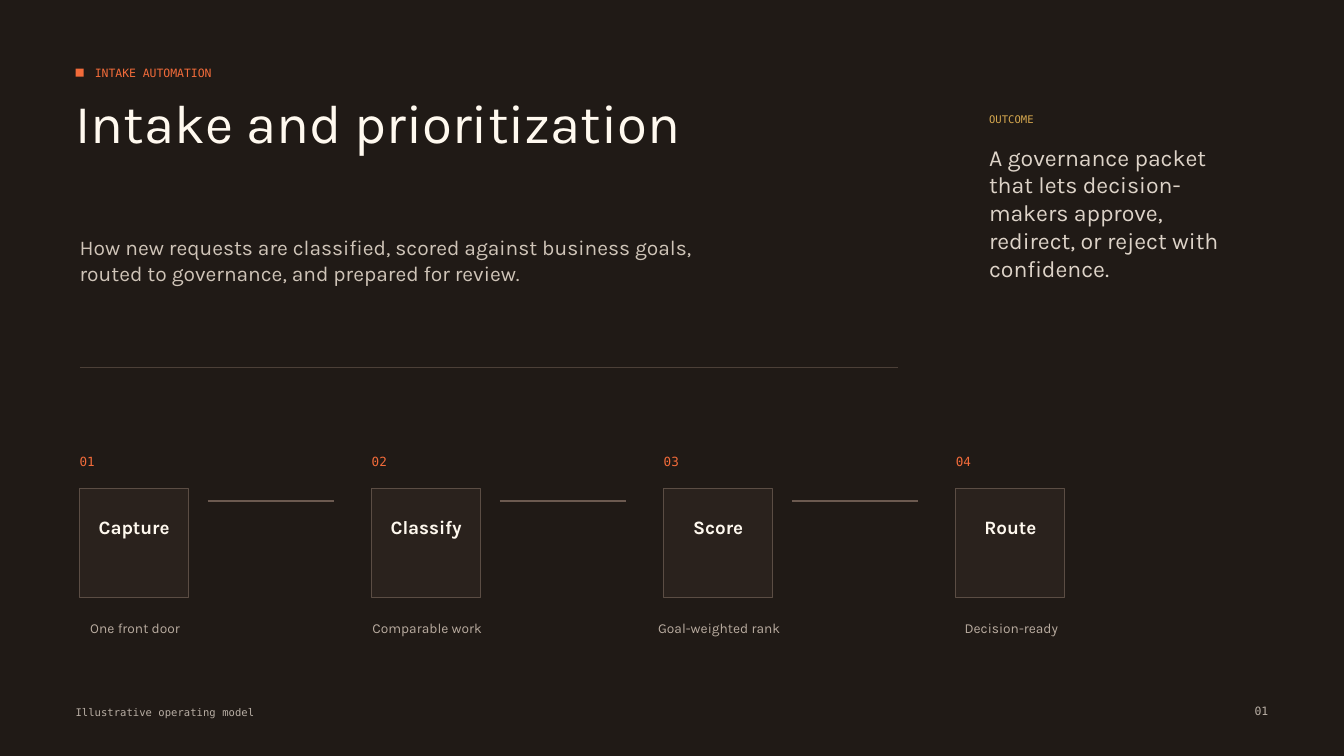
from pptx import Presentation
from pptx.dml.color import RGBColor
from pptx.enum.shapes import MSO_CONNECTOR, MSO_SHAPE
from pptx.enum.text import MSO_ANCHOR, PP_ALIGN
from pptx.oxml.ns import qn
from pptx.util import Inches, Pt
from lxml import etree

# Content
EYEBROW = "INTAKE AUTOMATION"
TITLE = "Intake and prioritization"
SUMMARY = ("How new requests are classified, scored against business goals, "
           "routed to governance, and prepared for review.")
OUTCOME_LABEL = "OUTCOME"
OUTCOME = ("A governance packet that lets decision-makers approve, redirect, "
           "or reject with confidence.")
STEPS = [
    ("Capture", "One front door"),
    ("Classify", "Comparable work"),
    ("Score", "Goal-weighted rank"),
    ("Route", "Decision-ready"),
]
FOOTER, PAGE = "Illustrative operating model", "01"

# Style
SANS, MONO = "Karla", "DejaVu Sans Mono"
DARK, ACCENT, CREAM, GOLD = "201A16", "F26B3A", "FFF9EF", "D6A84F"
CARD, CARD_EDGE, RULE, LINK = "2A221D", "5B4D44", "4C4038", "6C5A50"
SUMMARY_INK, CAPTION_INK, OUTCOME_INK, FOOTER_INK = "CFC4B8", "B9ACA0", "DDD3C8", "B8AEA4"

# Grid, in inches
WIDTH, HEIGHT = 13.33, 7.5
MARGIN, LEFT, SIDE = 0.75, 0.79, 9.81
LAST_STEP = 9.48
PITCH = (LAST_STEP - LEFT) / (len(STEPS) - 1)
CARD_TOP, CARD_SIZE = 4.85, 1.08
NAME_W, CAPTION_W = 0.79, 1.48
LINK_GAP, LINK_W = 0.19, 1.25

prs = Presentation()
prs.slide_width, prs.slide_height = Inches(WIDTH), Inches(HEIGHT)
s = prs.slides.add_slide(prs.slide_layouts[6])


def paint(fill, color):
    fill.solid()
    fill.fore_color.rgb = RGBColor.from_string(color)


def box(x, y, w, h, color, edge=None):
    sp = s.shapes.add_shape(MSO_SHAPE.RECTANGLE, Inches(x), Inches(y), Inches(w), Inches(h))
    sp.shadow.inherit = False
    paint(sp.fill, color)
    if edge:
        paint(sp.line.fill, edge)
        sp.line.width = Pt(0.75)
    else:
        sp.line.fill.background()


def rule(x, y, w, color, weight):
    line = s.shapes.add_connector(MSO_CONNECTOR.STRAIGHT, Inches(x), Inches(y),
                                  Inches(x + w), Inches(y))
    paint(line.line.fill, color)
    line.line.width = Pt(weight)
    etree.SubElement(line._element.spPr, qn("a:effectLst"))


def text(x, y, w, h, words, size, color, font=SANS, bold=False,
         align=PP_ALIGN.LEFT, anchor=MSO_ANCHOR.TOP):
    tf = s.shapes.add_textbox(Inches(x), Inches(y), Inches(w), Inches(h)).text_frame
    tf.word_wrap = True
    tf.vertical_anchor = anchor
    tf.margin_left = tf.margin_right = tf.margin_top = tf.margin_bottom = 0
    p = tf.paragraphs[0]
    p.text, p.alignment = words, align
    p.font.name, p.font.size, p.font.bold = font, Pt(size), bold
    paint(p.font.fill, color)


paint(s.background.fill, DARK)

# Heading
box(MARGIN, 0.68, 0.08, 0.08, ACCENT)
text(0.94, 0.6, 4.38, 0.25, EYEBROW, 8.2, ACCENT, MONO, anchor=MSO_ANCHOR.MIDDLE)
text(MARGIN, 0.88, 7.92, 1.38, TITLE, 39, CREAM)
text(LEFT, 2.33, 6.35, 0.92, SUMMARY, 15, SUMMARY_INK)
rule(LEFT, 3.65, 8.12, RULE, 0.75)

# Process steps
for i, (name, caption) in enumerate(STEPS):
    x = LEFT + i * PITCH
    mid = x + CARD_SIZE / 2
    if i < len(STEPS) - 1:
        rule(x + CARD_SIZE + LINK_GAP, 4.97, LINK_W, LINK, 1.5)
    text(x, 4.5, 0.56, 0.25, f"{i + 1:02}", 9, ACCENT, MONO)
    box(x, CARD_TOP, CARD_SIZE, CARD_SIZE, CARD, CARD_EDGE)
    text(mid - NAME_W / 2, 5.12, NAME_W, 0.27, name, 13.5, CREAM,
         bold=True, align=PP_ALIGN.CENTER)
    text(mid + 0.01 - CAPTION_W / 2, 6.15, CAPTION_W, 0.25, caption, 9.8, CAPTION_INK,
         align=PP_ALIGN.CENTER)

# Outcome
text(SIDE, 1.12, 1.15, 0.19, OUTCOME_LABEL, 7.5, GOLD, MONO)
text(SIDE, 1.42, 2.6, 1.67, OUTCOME, 16.5, OUTCOME_INK)

# Footer
text(MARGIN, 7, 3.33, 0.19, FOOTER, 7.5, FOOTER_INK, MONO)
text(WIDTH - MARGIN - 0.5, 6.98, 0.5, 0.21, PAGE, 8.2, FOOTER_INK, MONO, align=PP_ALIGN.RIGHT)

prs.save("out.pptx")
